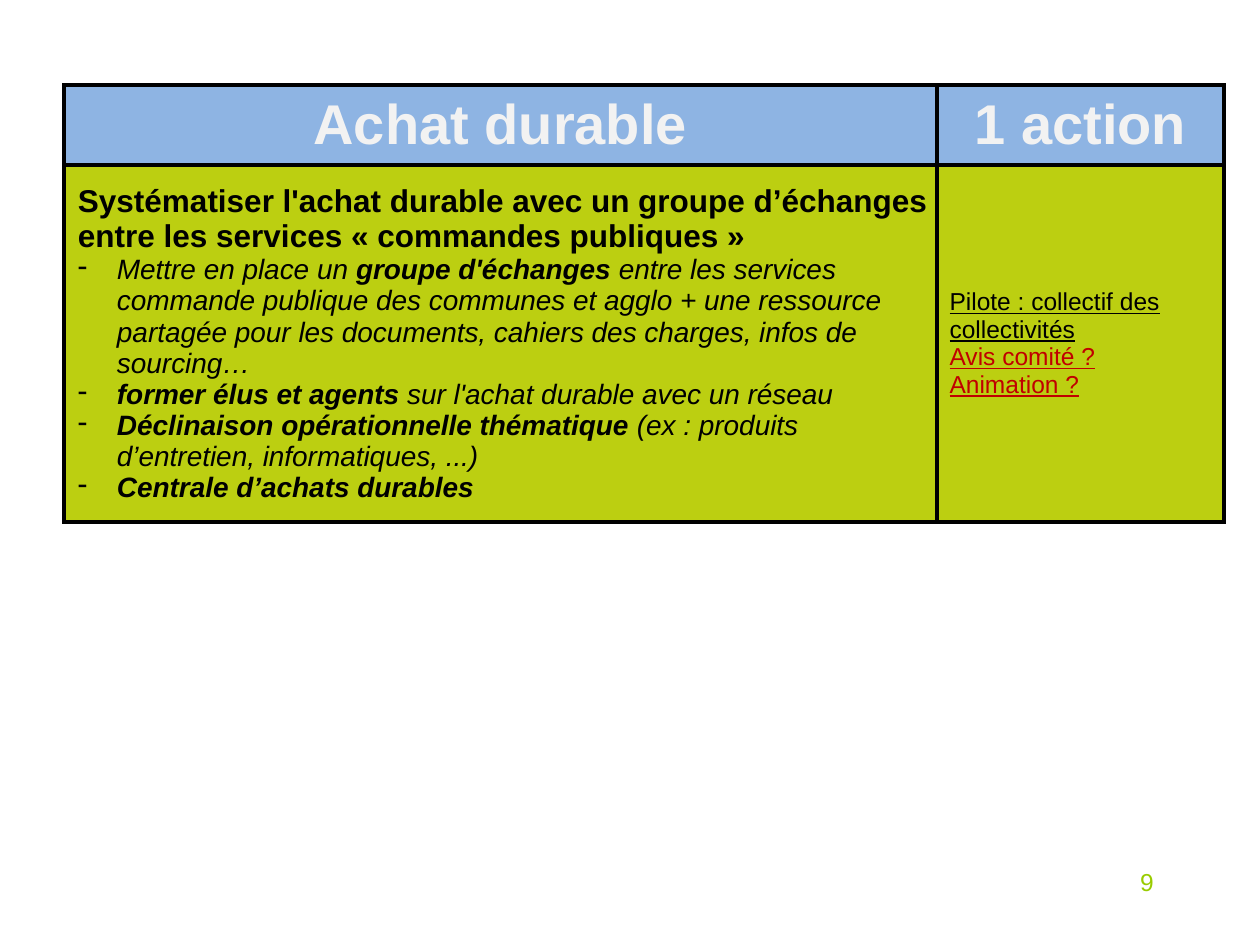
from dataclasses import dataclass

from lxml.etree import SubElement
from pptx import Presentation
from pptx.dml.color import RGBColor
from pptx.enum.text import MSO_ANCHOR, PP_ALIGN
from pptx.oxml import parse_xml
from pptx.oxml.ns import nsdecls, qn
from pptx.util import Emu, Pt

EMU_PER_PX = 914400 // 126


@dataclass(frozen=True)
class Theme:
    """Colours, type sizes and font of the slide."""

    font: str = "Arial"
    header_fill: str = "8EB4E3"
    body_fill: str = "BCCF11"
    header_ink: str = "F2F2F2"
    ink: str = "000000"
    alert: str = "C00000"
    number: str = "99CC00"
    border: str = "000000"
    border_width: float = 2.25
    header_size: int = 32
    lead_size: int = 18
    list_size: int = 16
    note_size: int = 14


THEME = Theme()
HEADERS = ("Achat durable", "1 action")
LEAD = "Systématiser l'achat durable avec un groupe d’échanges entre les services « commandes publiques »"
ACTIONS = (
    (
        ("Mettre en place un ", False),
        ("groupe d'échanges ", True),
        ("entre les services commande publique des communes et agglo + une ressource "
         "partagée pour les documents, cahiers des charges, infos de sourcing…", False),
    ),
    (("former élus et agents ", True), ("sur l'achat durable avec un réseau", False)),
    (
        ("Déclinaison opérationnelle thématique ", True),
        ("(ex : produits d’entretien, informatiques, ...)", False),
    ),
    (("Centrale d’achats durables", True),),
)
NOTES = (
    ("Pilote : collectif des collectivités", THEME.ink),
    ("Avis comité ?", THEME.alert),
    ("Animation ?", THEME.alert),
)


def px(length):
    """Turn whole pixels into EMU."""
    return Emu(length * EMU_PER_PX)


def add_span(para, text, size, color, bold=False, italic=False, underline=False):
    """Add one formatted run to a paragraph."""
    span = para.add_run()
    span.text = text
    font = span.font
    font.name, font.size = THEME.font, Pt(size)
    font.bold, font.italic, font.underline = bold, italic, underline
    font.color.rgb = RGBColor.from_string(color)


def next_para(frame):
    """Return the empty first paragraph or a new one."""
    first = frame.paragraphs[0]
    return frame.add_paragraph() if first.runs else first


def indent(para, left, first=0, bullet=None):
    """Set paragraph indents and an optional bullet character."""
    properties = para._p.get_or_add_pPr()
    properties.set("marL", str(px(left)))
    properties.set("indent", str(px(first)))
    if bullet:
        SubElement(properties, qn("a:buChar")).set("char", bullet)


def style_cell(cell, fill):
    """Fill, centre vertically and border a table cell."""
    cell.fill.solid()
    cell.fill.fore_color.rgb = RGBColor.from_string(fill)
    cell.vertical_anchor = MSO_ANCHOR.MIDDLE
    properties = cell._tc.get_or_add_tcPr()
    for position, side in enumerate(("lnL", "lnR", "lnT", "lnB")):
        line = parse_xml(
            f'<a:{side} {nsdecls("a")} w="{Pt(THEME.border_width)}"><a:solidFill>'
            f'<a:srgbClr val="{THEME.border}"/></a:solidFill></a:{side}>'
        )
        properties.insert(position, line)


def fill_header(cell, text):
    """Write a header cell."""
    style_cell(cell, THEME.header_fill)
    para = next_para(cell.text_frame)
    para.alignment = PP_ALIGN.CENTER
    add_span(para, text, THEME.header_size, THEME.header_ink, bold=True)


def fill_actions(cell):
    """Write the lead sentence and its list of actions."""
    style_cell(cell, THEME.body_fill)
    cell.margin_left = cell.margin_right = cell.margin_top = px(1)
    cell.margin_bottom = 0
    lead = next_para(cell.text_frame)
    indent(lead, 13)
    add_span(lead, LEAD, THEME.lead_size, THEME.ink, bold=True)
    for action in ACTIONS:
        para = next_para(cell.text_frame)
        indent(para, 52, -39, "-")
        for text, bold in action:
            add_span(para, text, THEME.list_size, THEME.ink, bold, italic=True)


def fill_notes(cell):
    """Write the underlined notes on who leads the action."""
    style_cell(cell, THEME.body_fill)
    for text, color in NOTES:
        add_span(next_para(cell.text_frame), text, THEME.note_size, color, underline=True)


def add_action_table(page):
    """Add the table of the theme and its actions."""
    columns, rows = (873, 287), (76, 357)
    frame = page.shapes.add_table(2, 2, px(64), px(85), px(sum(columns)), px(sum(rows)))
    table = frame.table
    for column, width in zip(table.columns, columns):
        column.width = px(width)
    for row, height in zip(table.rows, rows):
        row.height = px(height)
    for index, text in enumerate(HEADERS):
        fill_header(table.cell(0, index), text)
    fill_actions(table.cell(1, 0))
    fill_notes(table.cell(1, 1))


def add_page_number(page, number):
    """Add the page number at the lower right."""
    box = page.shapes.add_textbox(px(1061), px(861), px(105), px(63))
    box.text_frame.word_wrap = True
    para = next_para(box.text_frame)
    para.alignment = PP_ALIGN.RIGHT
    add_span(para, number, THEME.note_size, THEME.number)


def main():
    """Build and save the slide."""
    deck = Presentation()
    deck.slide_width, deck.slide_height = px(1260), px(945)
    page = deck.slides.add_slide(deck.slide_layouts[6])
    add_page_number(page, "9")
    add_action_table(page)
    deck.save("out.pptx")


if __name__ == "__main__":
    main()
